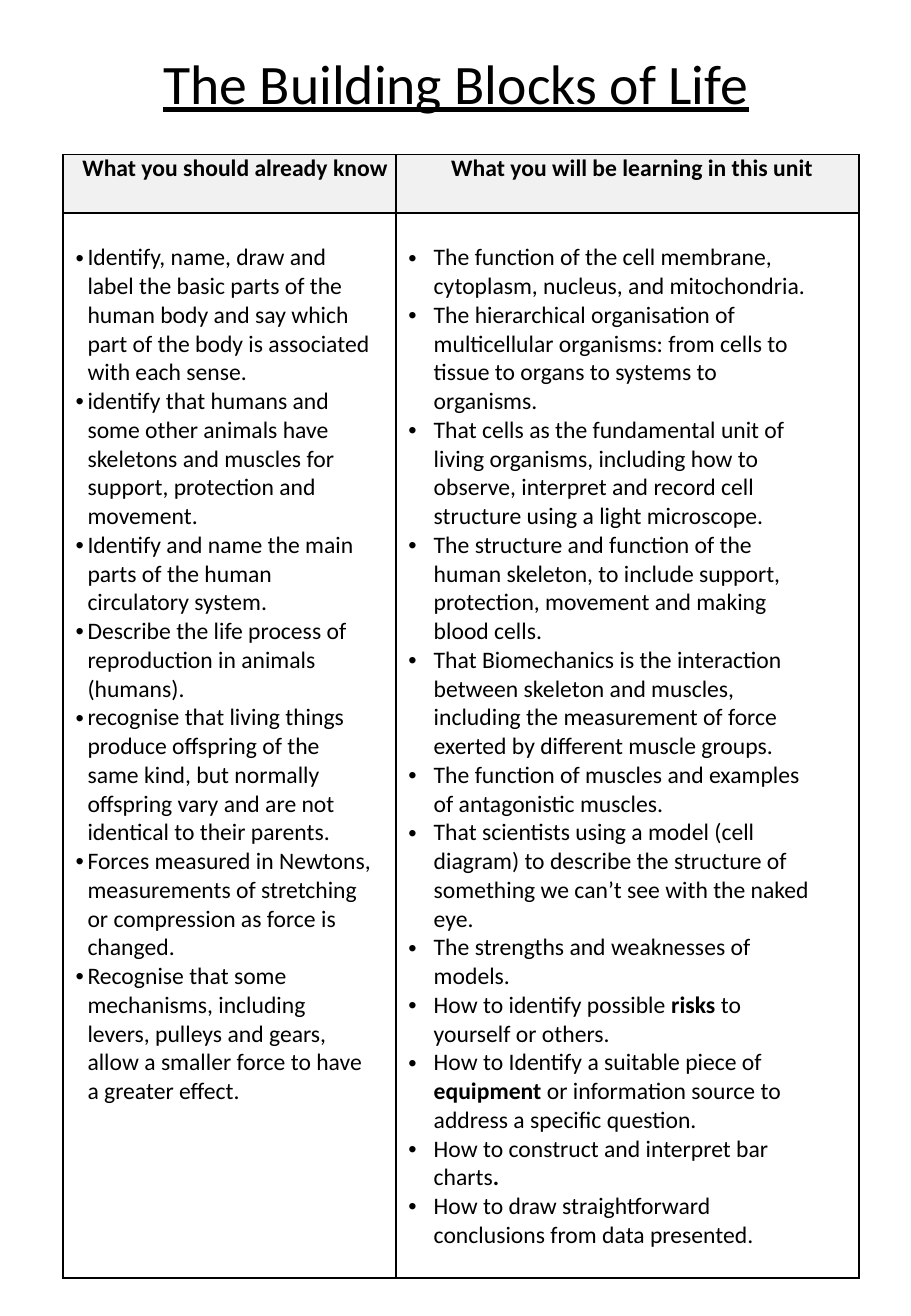
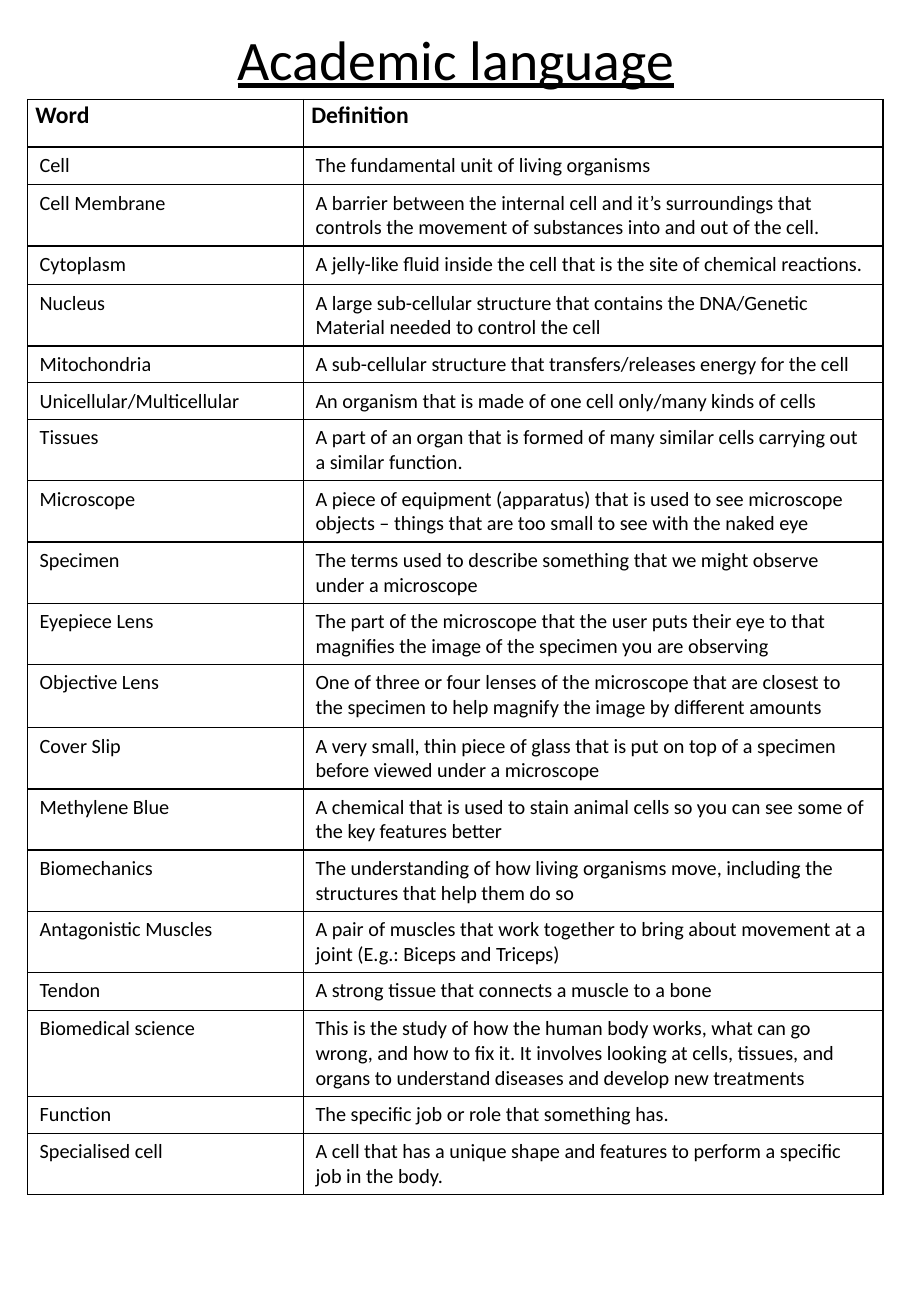
import pptx
import pptx.dml.color
import pptx.enum.text
import pptx.oxml
import pptx.oxml.ns
import pptx.util

Cm = pptx.util.Cm
Pt = pptx.util.Pt
BLACK = pptx.dml.color.RGBColor(0x00, 0x00, 0x00)
WHITE = pptx.dml.color.RGBColor(0xFF, 0xFF, 0xFF)
PALE_GREY = pptx.dml.color.RGBColor(0xF1, 0xF1, 0xF1)
FONT = "Calibri"
CENTER = pptx.enum.text.PP_ALIGN.CENTER
NAMESPACE = pptx.oxml.ns.nsdecls("a")


def add_text(para, text, size, bold=False, underline=None):
    for index, part in enumerate(text.split("*")):
        if part:
            span = para.add_run()
            span.text = part
            span.font.name = FONT
            span.font.size = Pt(size)
            span.font.color.rgb = BLACK
            span.font.bold = bold or index % 2 == 1
            span.font.underline = underline


def style_cell(cell, fill, left=0.0, top=0.0, right=0.0, bottom=0.0):
    cell.margin_left, cell.margin_top = Cm(left), Cm(top)
    cell.margin_right, cell.margin_bottom = Cm(right), Cm(bottom)
    properties = cell._tc.get_or_add_tcPr()
    for side in ("lnL", "lnR", "lnT", "lnB"):
        properties.append(pptx.oxml.parse_xml(
            f'<a:{side} {NAMESPACE} w="{Pt(1)}"><a:solidFill>'
            f'<a:srgbClr val="{BLACK}"/></a:solidFill></a:{side}>'))
    if fill is not None:
        cell.fill.solid()
        cell.fill.fore_color.rgb = fill
    else:
        cell.fill.background()


known = [
    "Identify, name, draw and label the basic parts of the human body and say which part of the body is associated with each sense.",
    "identify that humans and some other animals have skeletons and muscles for support, protection and movement.",
    "Identify and name the main parts of the human circulatory system.",
    "Describe the life process of reproduction in animals (humans).",
    "recognise that living things produce offspring of the same kind, but normally offspring vary and are not identical to their parents.",
    "Forces measured in Newtons, measurements of stretching or compression as force is changed.",
    "Recognise that some mechanisms, including levers, pulleys and gears, allow a smaller force to have a greater effect.",
]
learning = [
    "The function of the cell membrane, cytoplasm, nucleus, and mitochondria.",
    "The hierarchical organisation of multicellular organisms: from cells to tissue to organs to systems to organisms.",
    "That cells as the fundamental unit of living organisms, including how to observe, interpret and record cell structure using a light microscope.",
    "The structure and function of the human skeleton, to include support, protection, movement and making blood cells.",
    "That Biomechanics is the interaction between skeleton and muscles, including the measurement of force exerted by different muscle groups.",
    "The function of muscles and examples of antagonistic muscles.",
    "That scientists using a model (cell diagram) to describe the structure of something we can’t see with the naked eye.",
    "The strengths and weaknesses of models.",
    "How to identify possible *risks *to yourself or others.",
    "How to Identify a suitable piece of *equipment *or information source to address a specific question.",
    "How to construct and interpret bar charts*.*",
    "How to draw straightforward conclusions from data presented.",
]
glossary = [
    ("Cell", "The fundamental unit of living organisms", 0.79),
    ("Cell Membrane", "A barrier between the internal cell and it’s surroundings that controls the movement of substances into and out of the cell.", 1.28),
    ("Cytoplasm", "A jelly-like fluid inside the cell that is the site of chemical reactions.", 0.81),
    ("Nucleus", "A large sub-cellular structure that contains the DNA/Genetic Material needed to control the cell", 1.28),
    ("Mitochondria", "A sub-cellular structure that transfers/releases energy for the cell", 0.77),
    ("Unicellular/Multicellular", "An organism that is made of one cell only/many kinds of cells", 0.77),
    ("Tissues", "A part of an organ that is formed of many similar cells carrying out a similar function.", 1.28),
    ("Microscope", "A piece of equipment (apparatus) that is used to see microscope objects – things that are too small to see with the naked eye", 1.28),
    ("Specimen", "The terms used to describe something that we might observe under a microscope", 1.28),
    ("Eyepiece Lens", "The part of the microscope that the user puts their eye to that magnifies the image of the specimen you are observing", 1.28),
    ("Objective Lens", "One of three or four lenses of the microscope that are closest to the specimen to help magnify the image by different amounts", 1.32),
    ("Cover Slip", "A very small, thin piece of glass that is put on top of a specimen before viewed under a microscope", 1.28),
    ("Methylene Blue", "A chemical that is used to stain animal cells so you can see some of the key features better", 1.28),
    ("Biomechanics", "The understanding of how living organisms move, including the structures that help them do so", 1.28),
    ("Antagonistic Muscles", "A pair of muscles that work together to bring about movement at a joint (E.g.: Biceps and Triceps)", 1.28),
    ("Tendon", "A strong tissue that connects a muscle to a bone", 0.79),
    ("Biomedical science", "This is the study of how the human body works, what can go wrong, and how to fix it. It involves looking at cells, tissues, and organs to understand diseases and develop new treatments", 1.8),
    ("Function", "The specific job or role that something has.", 0.77),
    ("Specialised cell", "A cell that has a unique shape and features to perform a specific job in the body.", 1.28),
]
layouts = [
    ("The Building Blocks of Life", 0.86, 1.32, 3.23, [6.96, 9.68], [1.22, 22.27]),
    ("Academic language", 0.36, 0.58, 2.08, [5.77, 12.12],
     [0.99] + [height for word, meaning, height in glossary]),
]

deck = pptx.Presentation()
deck.slide_width, deck.slide_height = Cm(19.05), Cm(27.51)
tables = []
for title, title_top, left, top, widths, heights in layouts:
    page = deck.slides.add_slide(deck.slide_layouts[6])
    box = page.shapes.add_textbox(Cm(1.32), Cm(title_top), Cm(16.43), Cm(1.88))
    box.text_frame.word_wrap = True
    box.text_frame.vertical_anchor = pptx.enum.text.MSO_ANCHOR.MIDDLE
    para = box.text_frame.paragraphs[0]
    para.alignment = CENTER
    para.line_spacing = 0.9
    add_text(para, title, 33, underline=True)
    table = page.shapes.add_table(
        len(heights), len(widths), Cm(left), Cm(top),
        Cm(sum(widths)), Cm(sum(heights))).table
    table.first_row = table.horz_banding = False
    for column, width in zip(table.columns, widths):
        column.width = Cm(width)
    for row, height in zip(table.rows, heights):
        row.height = Cm(height)
    tables.append(table)

unit_table, word_table = tables
unit_columns = [
    ("What you should already know", 0.23, known, 0.51, 0.25, 0.47, 0),
    ("What you will be learning in this unit", 0.2, learning, 0.79, 0.53, 0.73, 0.15),
]
for index, (heading, shift, points, indent, hang, right, inset) in enumerate(unit_columns):
    cell = unit_table.cell(0, index)
    style_cell(cell, PALE_GREY)
    para = cell.text_frame.paragraphs[0]
    para.alignment = CENTER
    para._p.get_or_add_pPr().set("marL", str(Cm(shift)))
    add_text(para, heading, 14, bold=True)

    cell = unit_table.cell(1, index)
    style_cell(cell, None, top=0.64, right=right)
    for number, point in enumerate(points):
        frame = cell.text_frame
        para = frame.add_paragraph() if number else frame.paragraphs[0]
        properties = para._p.get_or_add_pPr()
        properties.set("marL", str(Cm(indent)))
        properties.set("indent", str(-Cm(hang)))
        if "*" not in point:
            properties.set("marR", str(Cm(inset)))
        properties.append(pptx.oxml.parse_xml(
            f'<a:buFont {NAMESPACE} typeface="Arial"/>'))
        properties.append(pptx.oxml.parse_xml(
            f'<a:buChar {NAMESPACE} char="•"/>'))
        add_text(para, point, 14)

for index, heading in enumerate(["Word", "Definition"]):
    cell = word_table.cell(0, index)
    style_cell(cell, WHITE, left=0.16, right=0.16)
    para = cell.text_frame.paragraphs[0]
    para.line_spacing = 1.07
    para.space_after = Pt(8)
    add_text(para, heading, 14, bold=True)

for number, entry in enumerate(glossary, 1):
    for index, text in enumerate(entry[:2]):
        cell = word_table.cell(number, index)
        style_cell(cell, WHITE, 0.25, 0.13, 0.25, 0.13)
        add_text(cell.text_frame.paragraphs[0], text, 12)

deck.save("out.pptx")
